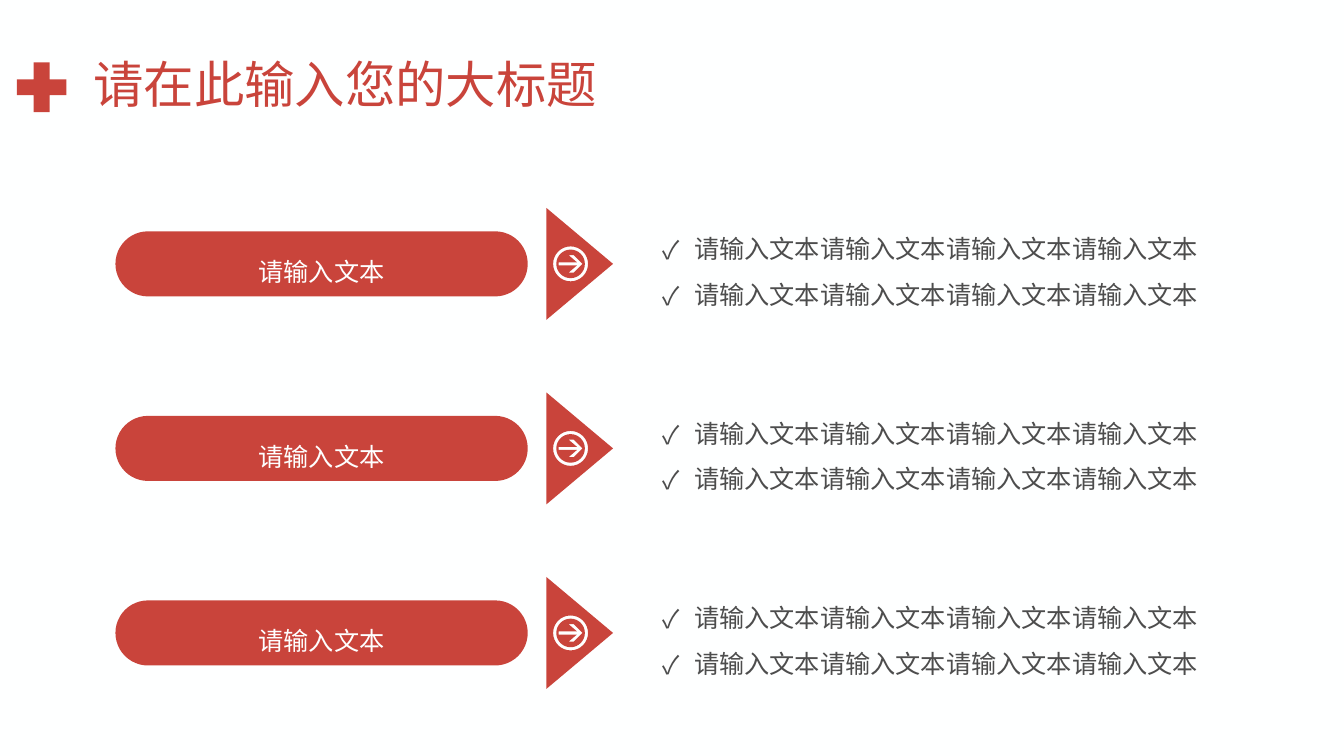
from pptx import Presentation, util as u, oxml
from pptx.dml.color import RGBColor
from pptx.enum import shapes as sh, text as tx
from pptx.oxml.ns import qn

# Content
TITLE = "请在此输入您的大标题"
LINE = "请输入文本请输入文本请输入文本请输入文本"
ROWS = [("请输入文本", [LINE, LINE])] * 3

# Look
FONT = "Noto Sans CJK SC"
RED, WHITE, GRAY = "C9443B", "FEFFFF", "4D4D4D"
HEAD = dict(size=36, color=RED, align=tx.PP_ALIGN.LEFT, space=0.9)
LABEL = dict(size=18, color=WHITE, align=tx.PP_ALIGN.CENTER, space=1.5)
BODY = dict(LABEL, color=GRAY)

# Layout in cm
WIDE, HIGH = 33.87, 19.05
TOP, STEP = 6.65, 4.65
PILL = (2.91, 10.39, 1.64)
NOTE = (15.93, 15.04, 3.91)
HUB, OUTER, INNER = 14.38, 0.44, 0.36
WEDGE = [(-0.61, 1.41), (-0.61, -1.41), (1.07, 0)]
ARROW = [(-0.3, 0.04), (0.16, 0.04), (-0.05, 0.22), (0.08, 0.22), (0.3, 0),
         (0.08, -0.22), (-0.05, -0.22), (0.16, -0.04), (-0.3, -0.04)]


def node(tag, **attrs):
    item = oxml.xmlchemy.OxmlElement(tag)
    for key, val in attrs.items():
        item.set(key, val)
    return item


def flat(shape, color):
    shape.shadow.inherit = False
    shape.fill.solid()
    shape.fill.fore_color.rgb = RGBColor.from_string(color)
    shape.line.fill.background()


def box(x, y, w, h):
    return [u.Cm(v) for v in (x, y, w, h)]


def mid(x, w, h, y):
    return box(x, y - h / 2, w, h)


def write(shape, lines, look, mark=None):
    frame = shape.text_frame
    for key, val in dict(word_wrap=True, vertical_anchor=tx.MSO_ANCHOR.MIDDLE).items():
        setattr(frame, key, val)
    for i, line in enumerate(lines):
        para = frame.add_paragraph() if i else frame.paragraphs[0]
        for key, val in dict(alignment=look["align"], line_spacing=look["space"]).items():
            setattr(para, key, val)
        run = para.add_run()
        run.text = line
        for key, val in dict(name=FONT, size=u.Pt(look["size"])).items():
            setattr(run.font, key, val)
        run.font.color.rgb = RGBColor.from_string(look["color"])
        run.font._element.find(qn("a:latin")).addnext(node("a:ea", typeface=FONT))
        if mark:
            props = para._p.get_or_add_pPr()
            props.set("marL", str(u.Cm(0.79)))
            props.set("indent", str(-u.Cm(0.79)))
            props.append(node("a:buFont", typeface=FONT))
            props.append(node("a:buChar", char=mark))


def ring(rad):
    # Start point, then two handles and an end for each quarter turn
    x, y, bend = -rad, 0, 0.5523
    pts = [(x, y)]
    for _ in range(4):
        a, b = -y, x
        pts += [(x + bend * a, y + bend * b), (a + bend * x, b + bend * y), (a, b)]
        x, y = a, b
    return pts


def badge(pool, y):
    # Nested outlines cut a ring and an arrow out of the wedge
    pen = None
    for loop in (WEDGE, ring(OUTER), ring(INNER), ARROW):
        pts = [(u.Cm(HUB + a), u.Cm(y + b)) for a, b in loop]
        if pen is None:
            pen = pool.build_freeform(*pts[0], scale=1.0)
        else:
            pen.move_to(*pts[0])
        pen.add_line_segments(pts[1:], close=True)
    shape = pen.convert_to_shape()
    flat(shape, RED)

    # Turn the steps of both rings into curves
    first = len(WEDGE) - 1
    steps = list(shape._element.iter(qn("a:lnTo")))[first:first + 24]
    for i in range(0, len(steps), 3):
        curve = node("a:cubicBezTo")
        steps[i].addprevious(curve)
        for step in steps[i:i + 3]:
            curve.append(step[0])
            step.getparent().remove(step)


def main():
    deck = Presentation()
    deck.slide_width, deck.slide_height = u.Cm(WIDE), u.Cm(HIGH)
    slide = deck.slides.add_slide(deck.slide_layouts[6])
    pool, kind = slide.shapes, sh.MSO_SHAPE

    # Backdrop and heading
    flat(pool.add_shape(kind.RECTANGLE, *box(0, 0, WIDE, HIGH)), WHITE)
    flat(pool.add_shape(kind.MATH_PLUS, *box(0.2, 1.35, 1.7, 1.7)), RED)
    write(pool.add_textbox(*box(2.1, 1.02, 29.67, 2.36)), [TITLE], HEAD)

    # Rows: badge, pill, checklist
    for i, (name, lines) in enumerate(ROWS):
        y = TOP + i * STEP
        badge(pool, y)
        pill = pool.add_shape(kind.ROUNDED_RECTANGLE, *mid(*PILL, y))
        pill.adjustments[0] = 0.5
        flat(pill, RED)
        write(pill, [name], LABEL)
        write(pool.add_textbox(*mid(*NOTE, y)), lines, BODY, "✓")

    deck.save("out.pptx")


if __name__ == "__main__":
    main()
